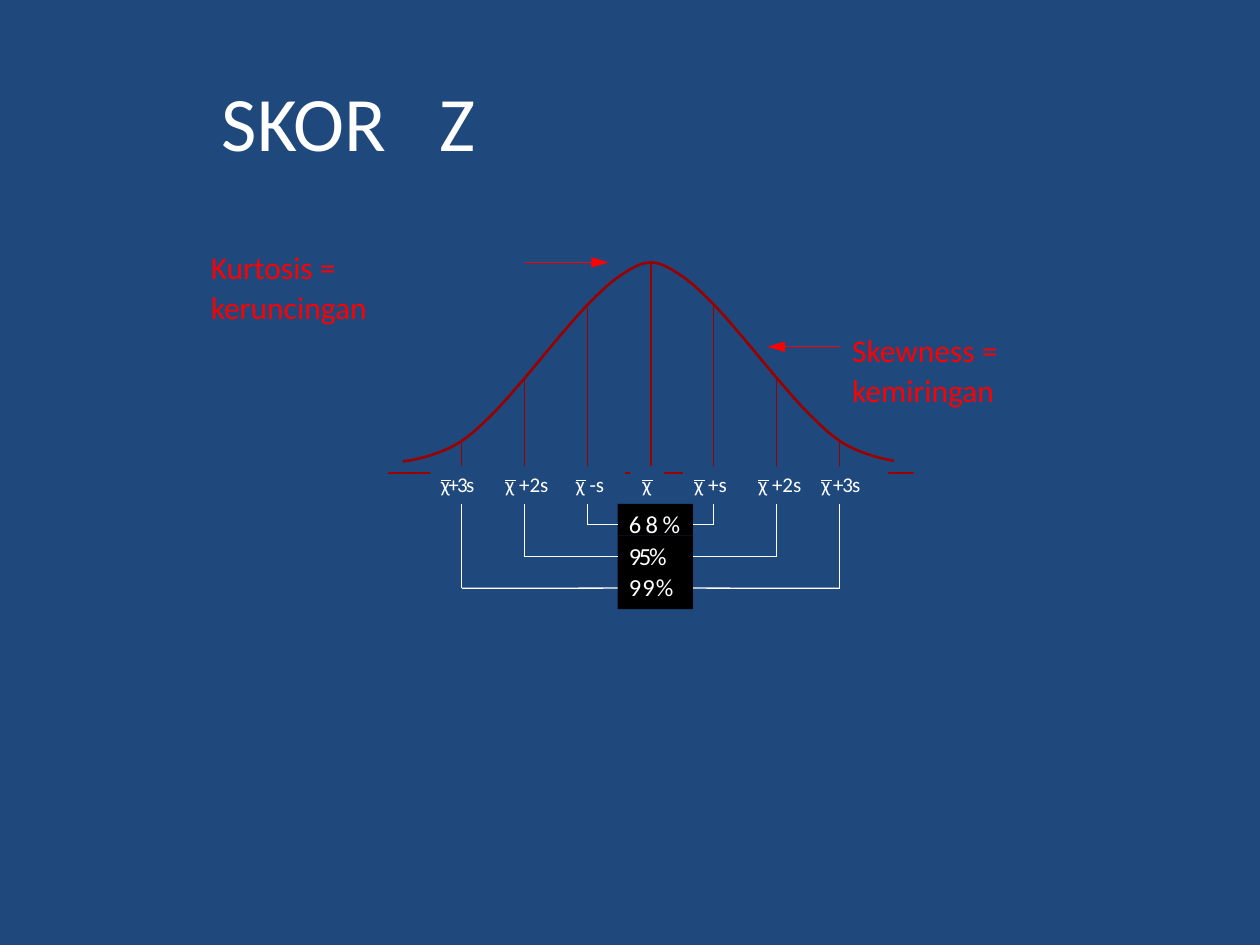
from lxml import etree
from pptx import Presentation
from pptx.dml.color import RGBColor
from pptx.enum.shapes import MSO_CONNECTOR as CONN, MSO_SHAPE as SHAPE
from pptx.enum.text import MSO_ANCHOR as ANCHOR, PP_ALIGN as ALIGN
from pptx.oxml.ns import qn
from pptx.util import Cm, Pt

COLORS = {"bg": "1F497D", "white": "FFFFFF", "curve": "990000",
          "note": "FF0000", "box": "000000"}
TITLE = "SKOR\tZ"
NOTES = [
    (["Kurtosis =", "keruncingan"], 4.25, 4.98),
    (["Skewness =", "kemiringan"], 17.18, 6.65),
]
ARROWS = [(10.58, 12.27, 5.29), (16.93, 15.47, 6.99)]
LABELS = [("χ+3s", 8.89, -0.9), ("χ +2s", 10.19, 0), ("χ -s", 11.61, 0),
          ("χ", 12.95, 0), ("χ +s", 14.0, 0), ("χ +2s", 15.29, 0),
          ("χ +3s", 16.56, -0.6)]
AXIS_DASHES = [(7.82, 8.66), (12.6, 12.7), (13.39, 13.76), (17.91, 18.42)]
BANDS = [("68%", 10.16, 0.64, 10.58, 2.5), ("95%", 10.8, 0.64, 11.22, -1.4),
         ("99%", 11.43, 0.85, 11.86, 0.6)]
PROFILE = [5.29, 5.57, 6.14, 6.86, 7.62, 8.33, 8.89, 9.18, 9.31]
CENTER, SD = 13.12, 1.27
KNOT = SD / 2
FLOOR, AXIS_Y, BAR_Y, BRACKET_TOP = 9.4, 9.53, 9.68, 10.16
BOX_LEFT, BOX_WIDTH = 12.45, 1.52

prs = Presentation()
prs.slide_width, prs.slide_height = Cm(25.4), Cm(19.05)
s = prs.slides.add_slide(prs.slide_layouts[6])


def rgb(name):
    return RGBColor.from_string(COLORS[name])


s.background.fill.solid()
s.background.fill.fore_color.rgb = rgb("bg")


def write(sp, lines, size, color="white", top=0, left=0, wrap=False,
          spacing=1.02, track=0):
    tf = sp.text_frame
    tf.word_wrap = wrap
    tf.vertical_anchor = ANCHOR.TOP
    tf.margin_left, tf.margin_top = Cm(left), Cm(top)
    tf.margin_right = tf.margin_bottom = 0
    for i, line in enumerate(lines):
        p = tf.paragraphs[0] if i == 0 else tf.add_paragraph()
        p.alignment = ALIGN.LEFT
        p.line_spacing = spacing
        r = p.add_run()
        r.text = line
        r.font.name, r.font.size = "Calibri", Pt(size)
        r.font.color.rgb = rgb(color)
        if track:
            r._r.get_or_add_rPr().set("spc", str(round(track * 100)))
    return tf


def textbox(x, y, w, h, lines, size, **fmt):
    return write(s.shapes.add_textbox(Cm(x), Cm(y), Cm(w), Cm(h)), lines, size, **fmt)


def line(x1, y1, x2, y2, color, width=0.75, arrow=False):
    c = s.shapes.add_connector(CONN.STRAIGHT, Cm(x1), Cm(y1), Cm(x2), Cm(y2))
    c.line.color.rgb = rgb(color)
    c.line.width = Pt(width)
    if arrow:
        etree.SubElement(c.line._get_or_add_ln(), qn("a:tailEnd"),
                         type="triangle", w="med", len="lg")
    etree.SubElement(c._element.spPr, qn("a:effectLst"))
    return c


def curve_y(distance):
    i, t = divmod(distance / KNOT, 1)
    i, last = int(i), len(PROFILE) - 1
    a, b, c, d = (PROFILE[min(abs(j), last)] for j in range(i - 1, i + 3))
    return b + t / 2 * (c - a + t * (2 * a - 5 * b + 4 * c - d
                                     + t * (3 * b - a - 3 * c + d)))


for k in range(-3, 4):
    x = CENTER + k * SD
    line(x, FLOOR, x, curve_y(abs(k) * SD), "curve", 0.75 if k else 1.5)

points = [(Cm(CENTER + i / 10), Cm(curve_y(abs(i) / 10))) for i in range(-50, 50)]
builder = s.shapes.build_freeform(*points[0])
builder.add_line_segments(points[1:], close=False)
curve = builder.convert_to_shape()
curve.shadow.inherit = False
curve.fill.background()
curve.line.color.rgb = rgb("curve")
curve.line.width = Pt(1.5)

for x1, x2 in AXIS_DASHES:
    line(x1, AXIS_Y, x2, AXIS_Y, "curve", 1)

for k, (text, top, height, y, track) in enumerate(BANDS, 1):
    box = s.shapes.add_shape(SHAPE.RECTANGLE, Cm(BOX_LEFT), Cm(top),
                             Cm(BOX_WIDTH), Cm(height))
    box.shadow.inherit = False
    box.fill.solid()
    box.fill.fore_color.rgb = rgb("box")
    box.line.fill.background()
    write(box, [text], 14, left=0.23, top=0.1, track=track)
    for side, edge, site in ((-1, BOX_LEFT, 1), (1, BOX_LEFT + BOX_WIDTH, 3)):
        x = CENTER + side * k * SD
        line(x, BRACKET_TOP, x, y, "white")
        arm = line(x, y, edge, y, "white")
        if abs(top + height / 2 - y) < 0.02:
            arm.end_connect(box, site)

for x1, x2, y in ARROWS:
    line(x1, y, x2, y, "note", arrow=True)

for text, x, track in LABELS:
    line(x, BAR_Y, x + 0.21, BAR_Y, "white")
    textbox(x, 9.5, 1.0, 0.6, [text], 12, track=track)

tf = textbox(4.47, 1.78, 10.87, 1.63, [TITLE], 44, spacing=Pt(45), wrap=True)
tabs = etree.SubElement(tf.paragraphs[0]._p.get_or_add_pPr(), qn("a:tabLst"))
etree.SubElement(tabs, qn("a:tab"), pos=str(Cm(4.4)), algn="l")

for lines, x, y in NOTES:
    textbox(x, y, 4.5, 1.65, lines, 18, color="note", spacing=1.04)

prs.save("out.pptx")
